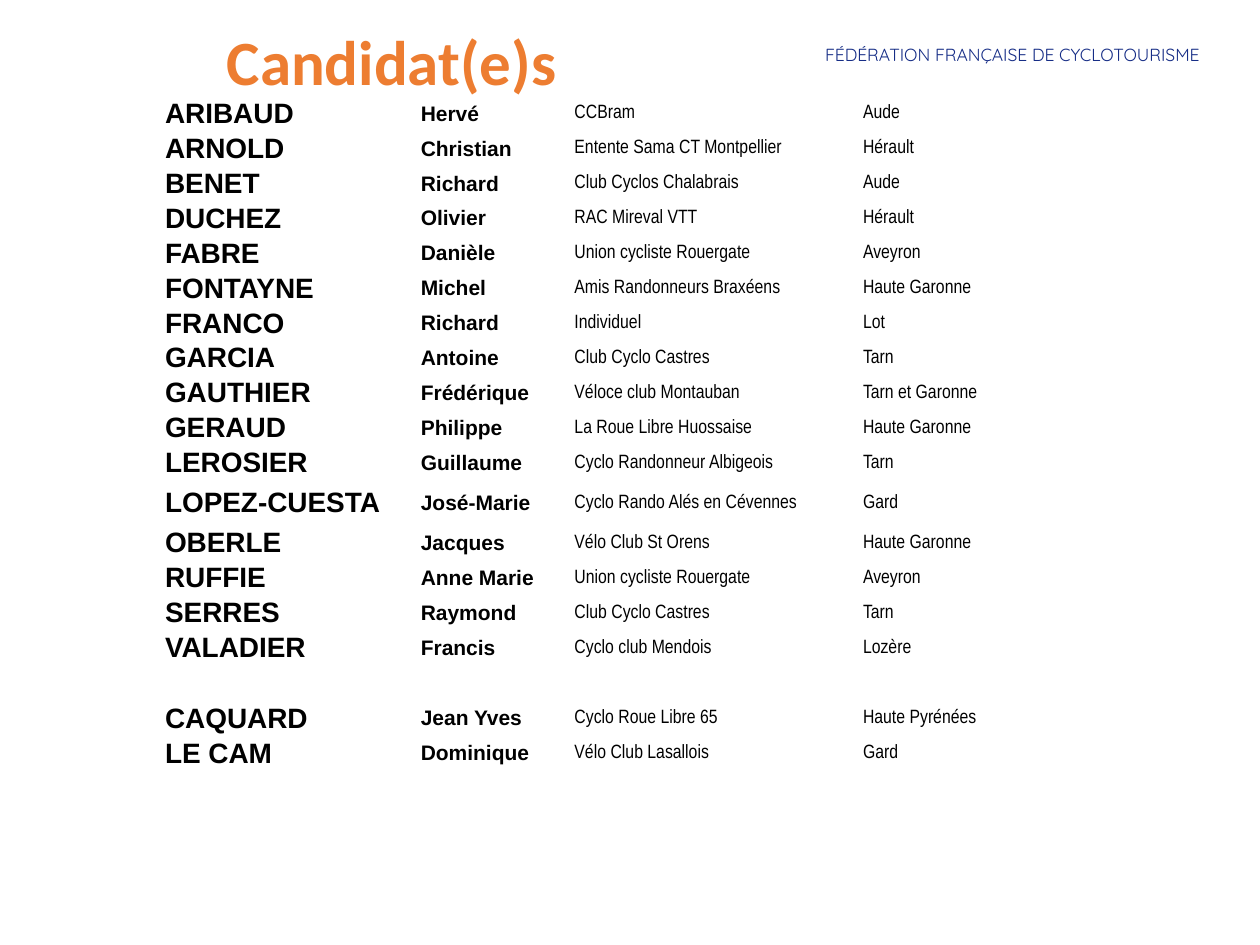
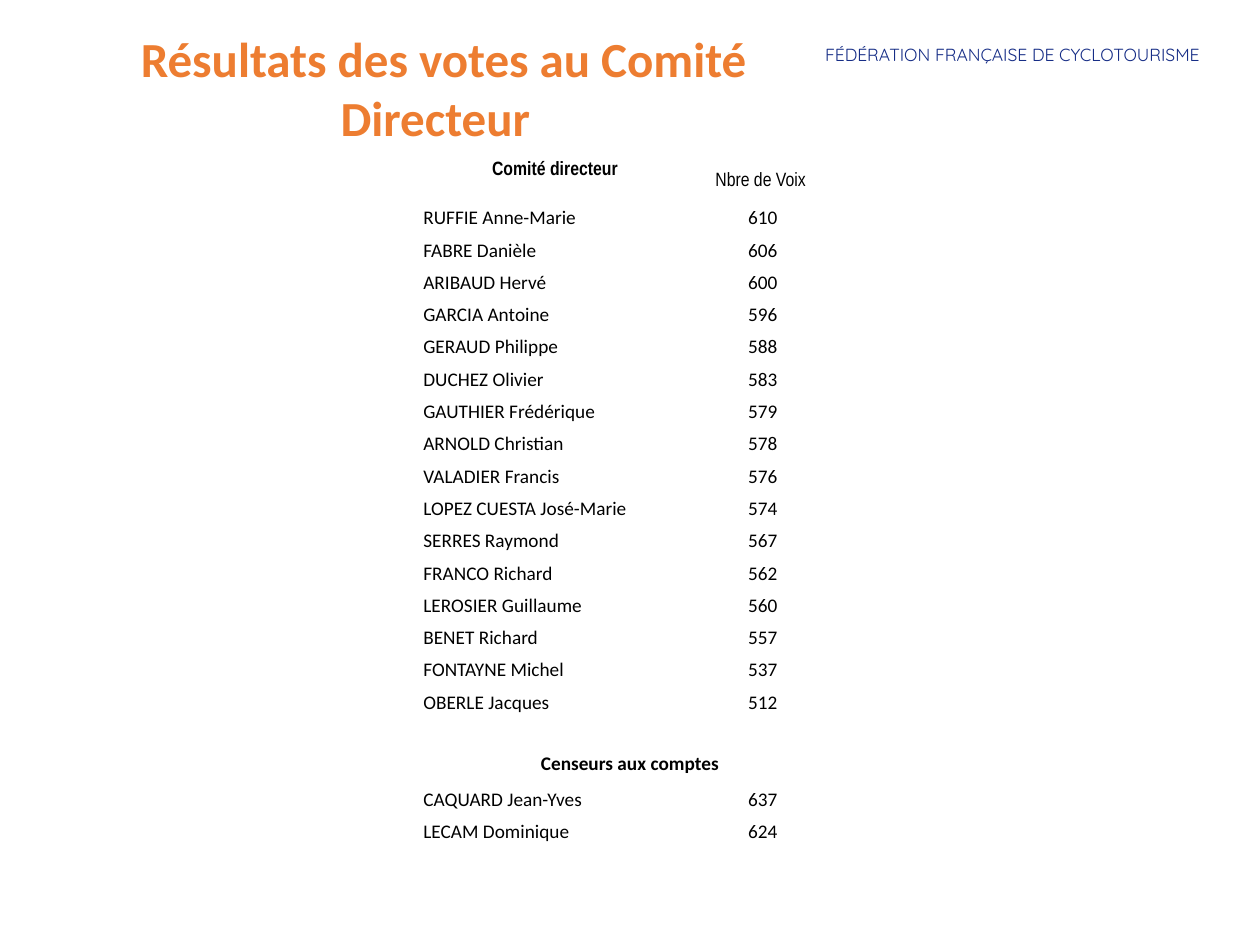
"""Builds the candidates and vote results slides of a committee election."""
from dataclasses import dataclass, replace

from lxml.etree import SubElement
from pptx import Presentation
from pptx.dml.color import RGBColor as Rgb
from pptx.enum.text import MSO_ANCHOR as Anchor, MSO_AUTO_SIZE as AutoSize, PP_ALIGN as Align
from pptx.oxml.ns import qn
from pptx.util import Inches, Pt

SLIDE_WIDTH, SLIDE_HEIGHT = Inches(10), Inches(7.5)
GRID_COLUMNS, GRID_ROWS = 200, 150


@dataclass(frozen=True)
class Type:
    font: str
    size: float
    bold: bool
    color: str


@dataclass(frozen=True)
class Look:
    type: Type
    align: Align = Align.LEFT
    anchor: Anchor = Anchor.MIDDLE
    top_inset: float = 0.2


@dataclass(frozen=True)
class Area:
    column: float
    row: float
    columns: float
    rows: float


@dataclass(frozen=True)
class Grid:
    area: Area
    widths: tuple[float, ...]
    heights: list[float]
    rows: list[tuple[str, ...]]
    looks: list[tuple[Look, ...]]


@dataclass(frozen=True)
class Theme:
    banner: Type = Type("Quicksand", 10, False, "162D86")
    title: Type = Type("Calibri", 36, True, "ED7D31")
    long_title: Type = Type("Calibri", 28, True, "ED7D31")
    surname: Type = Type("Arial", 16, True, "000000")
    first_name: Type = Type("Arial", 12, True, "000000")
    detail: Type = Type("Arial Narrow", 11, False, "000000")
    heading: Type = Type("Arial Narrow", 11, True, "000000")
    result: Type = Type("Calibri", 11, False, "000000")
    section: Type = Type("Calibri", 11, True, "000000")


THEME = Theme()
FEDERATION = "FÉDÉRATION FRANÇAISE DE CYCLOTOURISME"
BANNER_AREA = Area(129, 6, 69.4, 5.4)

CANDIDATES = [
    ("ARIBAUD", "Hervé", "CCBram", "Aude"),
    ("ARNOLD", "Christian", "Entente Sama CT Montpellier", "Hérault"),
    ("BENET", "Richard", "Club Cyclos Chalabrais", "Aude"),
    ("DUCHEZ", "Olivier", "RAC Mireval VTT", "Hérault"),
    ("FABRE", "Danièle", "Union cycliste Rouergate", "Aveyron"),
    ("FONTAYNE", "Michel", "Amis Randonneurs Braxéens", "Haute Garonne"),
    ("FRANCO", "Richard", "Individuel", "Lot"),
    ("GARCIA", "Antoine", "Club Cyclo Castres", "Tarn"),
    ("GAUTHIER", "Frédérique", "Véloce club Montauban", "Tarn et Garonne"),
    ("GERAUD", "Philippe", "La Roue Libre Huossaise", "Haute Garonne"),
    ("LEROSIER", "Guillaume", "Cyclo Randonneur Albigeois", "Tarn"),
    ("LOPEZ-CUESTA", "José-Marie", "Cyclo Rando Alés en Cévennes", "Gard"),
    ("OBERLE", "Jacques", "Vélo Club St Orens", "Haute Garonne"),
    ("RUFFIE", "Anne Marie", "Union cycliste Rouergate", "Aveyron"),
    ("SERRES", "Raymond", "Club Cyclo Castres", "Tarn"),
    ("VALADIER", "Francis", "Cyclo club Mendois", "Lozère"),
    ("", "", "", ""),
    ("CAQUARD", "Jean Yves", "Cyclo Roue Libre 65", "Haute Pyrénées"),
    ("LE CAM", "Dominique", "Vélo Club Lasallois", "Gard"),
]
SECTION = "Censeurs aux comptes"
VOTES = [
    ("Comité directeur", "Nbre de Voix "),
    ("RUFFIE Anne-Marie", "610"),
    ("FABRE Danièle", "606"),
    ("ARIBAUD Hervé", "600"),
    ("GARCIA Antoine", "596"),
    ("GERAUD Philippe", "588"),
    ("DUCHEZ Olivier", "583"),
    ("GAUTHIER Frédérique", "579"),
    ("ARNOLD Christian", "578"),
    ("VALADIER Francis", "576"),
    ("LOPEZ CUESTA José-Marie", "574"),
    ("SERRES Raymond", "567"),
    ("FRANCO Richard", "562"),
    ("LEROSIER Guillaume", "560"),
    ("BENET Richard", "557"),
    ("FONTAYNE Michel", "537"),
    ("OBERLE Jacques", "512"),
    ("", ""),
    (SECTION, ""),
    ("CAQUARD Jean-Yves", "637"),
    ("LECAM Dominique", "624"),
]


def across(columns: float) -> int:
    return round(SLIDE_WIDTH * columns / GRID_COLUMNS)


def down(rows: float) -> int:
    return round(SLIDE_HEIGHT * rows / GRID_ROWS)


def placed(area: Area) -> dict[str, int]:
    return {"left": across(area.column), "top": down(area.row),
            "width": across(area.columns), "height": down(area.rows)}


def apply(target, values: dict) -> None:
    for attribute, value in values.items():
        setattr(target, attribute, value)


def write(paragraph, text: str, style: Type, align: Align) -> None:
    paragraph.alignment = align
    if not text:
        SubElement(paragraph._p, qn("a:endParaRPr"), sz=str(style.size * 100))
        return
    run = paragraph.add_run()
    run.text = text
    apply(run.font, {"name": style.font, "size": Pt(style.size), "bold": style.bold})
    run.font.color.rgb = Rgb.from_string(style.color)


def add_page(deck, title: str, area: Area, style: Type, align: Align, first_indent: float = 0):
    slide = deck.slides.add_slide(deck.slide_layouts[5])
    heading = slide.shapes.title
    banner = slide.shapes.add_textbox(**placed(BANNER_AREA))
    apply(heading, placed(area))
    for shape in (heading, banner):
        apply(shape.text_frame, {"word_wrap": True, "auto_size": AutoSize.NONE,
                                 "vertical_anchor": Anchor.TOP})
    write(heading.text_frame.paragraphs[0], title, style, align)
    heading.text_frame.paragraphs[0]._p.get_or_add_pPr().set("indent", str(across(first_indent)))
    write(banner.text_frame.paragraphs[0], FEDERATION, THEME.banner, Align.LEFT)
    return slide


def fill_cell(cell, text: str, look: Look) -> None:
    cell.fill.background()
    apply(cell, {"margin_left": across(0.2), "margin_right": across(0.2), "margin_bottom": 0,
                 "margin_top": down(look.top_inset), "vertical_anchor": look.anchor})
    write(cell.text_frame.paragraphs[0], text, look.type, look.align)


def add_grid(slide, grid: Grid):
    table = slide.shapes.add_table(len(grid.rows), len(grid.widths), **placed(grid.area)).table
    apply(table, {"first_row": False, "horz_banding": False})
    for column, width in zip(table.columns, grid.widths):
        column.width = across(width)
    for row, height, texts, looks in zip(table.rows, grid.heights, grid.rows, grid.looks):
        row.height = down(height)
        for cell, text, look in zip(row.cells, texts, looks):
            fill_cell(cell, text, look)
    return table


def row_heights(total: float, count: int, tall_row: int, tall: float) -> list[float]:
    regular = (total - tall) / (count - 1)
    return [tall if index == tall_row else regular for index in range(count)]


def add_candidates(deck) -> None:
    slide = add_page(deck, "Candidat(e)s", Area(34, 2.6, 60.6, 14.2), THEME.title, Align.LEFT)
    area = Area(26, 15.2, 137.2, 107)
    longest = [row[0] for row in CANDIDATES].index("LOPEZ-CUESTA")
    looks = tuple(Look(style) for style in
                  (THEME.surname, THEME.first_name, THEME.detail, THEME.detail))
    add_grid(slide, Grid(area, (40.6, 24.4, 45.8, 26.4),
                         row_heights(area.rows, len(CANDIDATES), longest, 7.2),
                         CANDIDATES, [looks] * len(CANDIDATES)))


def add_votes(deck) -> None:
    slide = add_page(deck, "Résultats des votes au Comité Directeur",
                     Area(9.8, 3.6, 118.6, 20.6), THEME.long_title, Align.CENTER, 2.6)
    area = Area(67, 22.6, 66, 111.4)
    name = Look(THEME.result, anchor=Anchor.BOTTOM)
    count = replace(name, align=Align.CENTER)
    heading = Look(THEME.heading, Align.CENTER)
    looks = [(name, count)] * len(VOTES)
    looks[0] = (heading, replace(heading, type=THEME.detail, top_inset=3.6))
    section_row = VOTES.index((SECTION, ""))
    looks[section_row] = (replace(heading, type=THEME.section),) * 2
    table = add_grid(slide, Grid(area, (42.2, 23.8),
                                 row_heights(area.rows, len(VOTES), 0, 8.8), VOTES, looks))
    table.cell(section_row, 0).merge(table.cell(section_row, 1))


def main() -> None:
    deck = Presentation()
    apply(deck, {"slide_width": SLIDE_WIDTH, "slide_height": SLIDE_HEIGHT})
    add_candidates(deck)
    add_votes(deck)
    deck.save("out.pptx")


if __name__ == "__main__":
    main()
